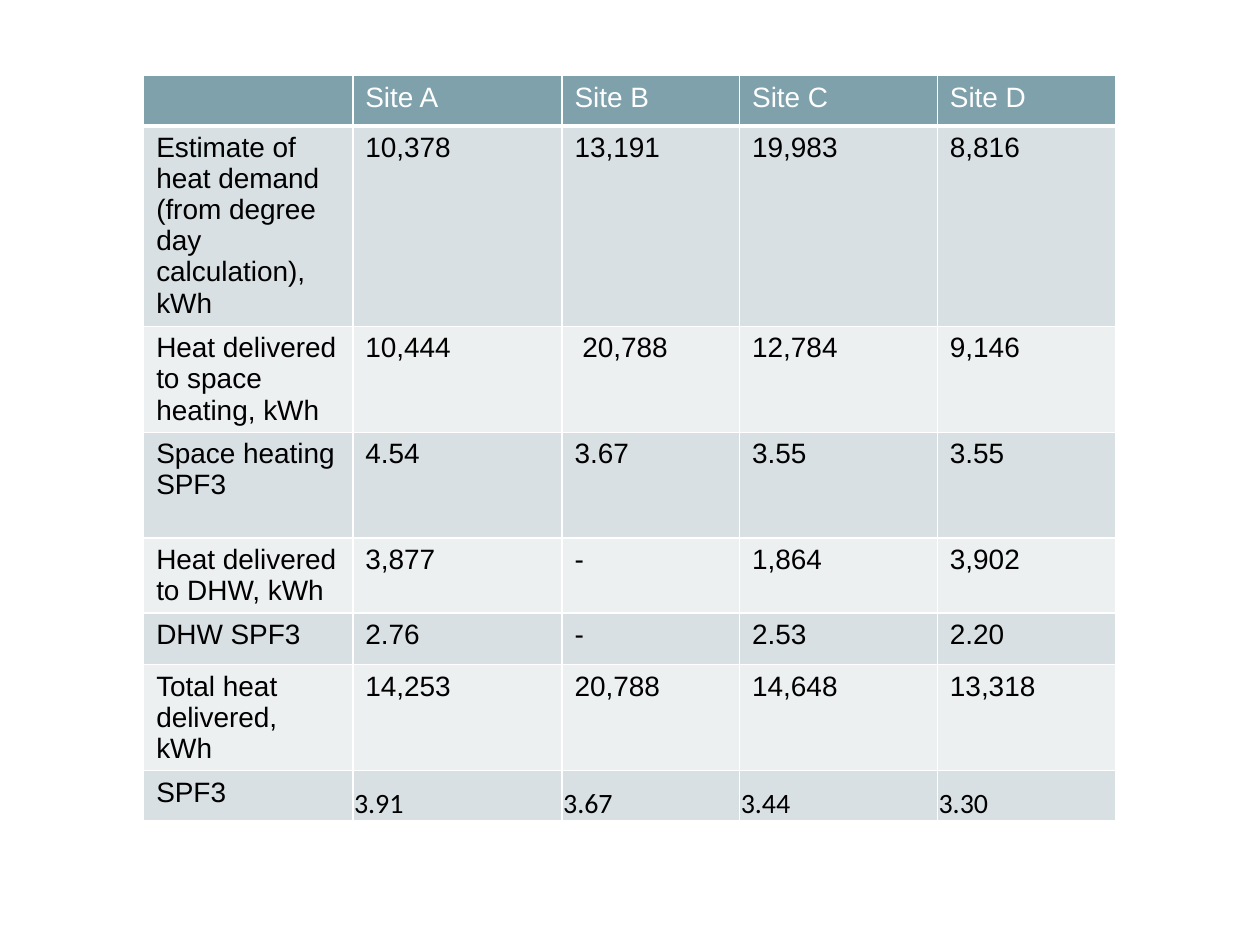
"""Build a slide with a table of heat pump results for four sites."""
import pptx
import pptx.util
import pptx.dml.color
import pptx.enum.text
import lxml.etree
import pptx.oxml.ns

Inches, Pt = pptx.util.Inches, pptx.util.Pt
RGBColor = pptx.dml.color.RGBColor
WHITE = RGBColor(0xFF, 0xFF, 0xFF)
BLACK = RGBColor(0, 0, 0)
TEAL = RGBColor(0x7F, 0xA1, 0xAC)
DARK = RGBColor(0xD8, 0xE0, 0xE3)
LIGHT = RGBColor(0xEC, 0xF0, 0xF1)

WIDTHS = [1.66, 1.66, 1.41, 1.57, 1.42]
HEIGHTS = [0.4, 1.59, 0.84, 0.84, 0.59, 0.41, 0.84, 0.4]
ROWS = [
    ["", "Site A", "Site B", "Site C", "Site D"],
    ["Estimate of heat demand (from degree day calculation), kWh",
     "10,378", "13,191", "19,983", "8,816"],
    ["Heat delivered to space heating, kWh",
     "10,444", " 20,788", "12,784", "9,146"],
    ["Space heating SPF3", "4.54", "3.67", "3.55", "3.55"],
    ["Heat delivered to DHW, kWh", "3,877", "-", "1,864", "3,902"],
    ["DHW SPF3", "2.76", "-", "2.53", "2.20"],
    ["Total heat delivered, kWh", "14,253", "20,788", "14,648", "13,318"],
    ["SPF3", "3.91", "3.67", "3.44", "3.30"],
]


def add_edge(cell, side, width):
    props = cell._tc.get_or_add_tcPr()
    qn = pptx.oxml.ns.qn
    line = lxml.etree.SubElement(props, qn("a:ln" + side), w=str(Pt(width)))
    fill = lxml.etree.SubElement(line, qn("a:solidFill"))
    lxml.etree.SubElement(fill, qn("a:srgbClr"), val=str(WHITE))


deck = pptx.Presentation()
deck.slide_width, deck.slide_height = Inches(10), Inches(7.5)
slide = deck.slides.add_slide(deck.slide_layouts[6])
table = slide.shapes.add_table(
    len(ROWS), len(WIDTHS), Inches(1.14), Inches(0.6),
    Inches(sum(WIDTHS)), Inches(sum(HEIGHTS))).table

for column, width in zip(table.columns, WIDTHS):
    column.width = Inches(width)
for row, height in zip(table.rows, HEIGHTS):
    row.height = Inches(height)

for r, texts in enumerate(ROWS):
    head, last = r == 0, r == len(ROWS) - 1
    for c, text in enumerate(texts):
        cell = table.cell(r, c)
        for side in "LRTB":
            thick = (head and side == "B") or (r == 1 and side == "T")
            add_edge(cell, side, 3 if thick else 1)
        cell.fill.solid()
        cell.fill.fore_color.rgb = TEAL if head else DARK if r % 2 else LIGHT
        total = last and c > 0
        if total:
            cell.vertical_anchor = pptx.enum.text.MSO_ANCHOR.BOTTOM
            cell.margin_left = cell.margin_right = Inches(0.01)
            cell.margin_top, cell.margin_bottom = Inches(0.01), Inches(0)
        cell.text_frame.text = text
        font = cell.text_frame.paragraphs[0].font
        if text:
            font = cell.text_frame.paragraphs[0].runs[0].font
        font.name = "Calibri" if total else "Arial"
        font.size = Pt(16)
        font.bold = False
        font.color.rgb = WHITE if head else BLACK

deck.save("out.pptx")
